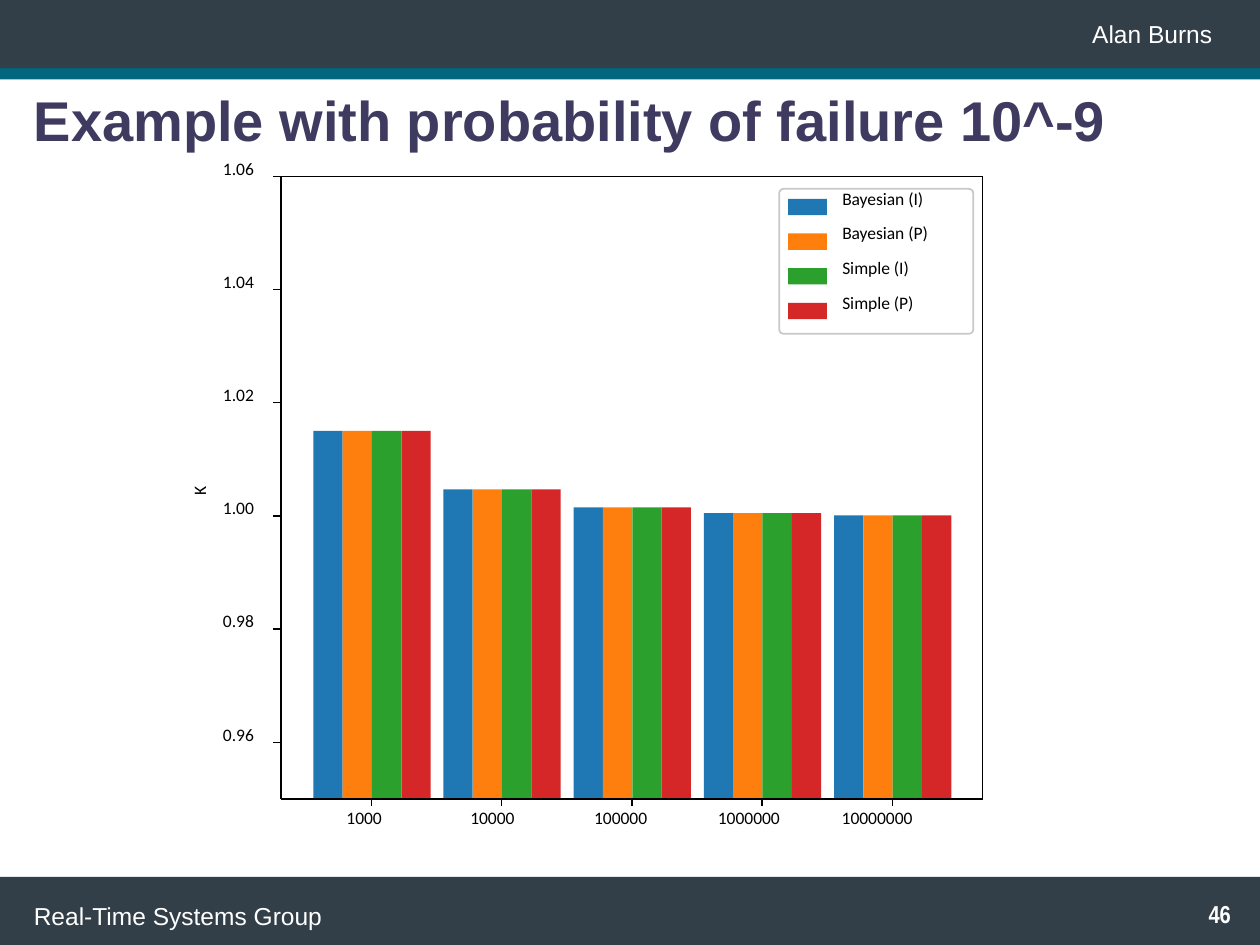
from lxml.etree import SubElement
from pptx import Presentation
from pptx.dml.color import RGBColor
from pptx.enum.shapes import MSO_CONNECTOR as Connector, MSO_SHAPE as Shape
from pptx.enum.text import MSO_ANCHOR as Anchor, PP_ALIGN as Align
from pptx.oxml.ns import qn
from pptx.util import Inches, Pt

WIDTH, HEIGHT = 10, 7.5
COLORS = {"band": "333F48", "stripe": "00677F", "title": "3F3A60", "white": "FFFFFF",
          "black": "000000", "legend_border": "C8C8C8",
          "blue": "1F77B4", "orange": "FF7F0E", "green": "2CA02C", "red": "D62728"}
SERIES = {"Bayesian (I)": "blue", "Bayesian (P)": "orange",
          "Simple (I)": "green", "Simple (P)": "red"}
K_PERCENT = {"1000": 101.5, "10000": 100.47, "100000": 100.15,
             "1000000": 100.05, "10000000": 100.01}
AXIS_MIN, AXIS_MAX = 95, 106
TICKS = range(96, AXIS_MAX + 1, 2)


def rgb(name):
    return RGBColor.from_string(COLORS[name])


def add_block(slide, box, color):
    block = slide.shapes.add_shape(Shape.RECTANGLE, *map(Inches, box))
    block.shadow.inherit = False
    block.fill.solid()
    block.fill.fore_color.rgb = rgb(color)
    block.line.fill.background()


def add_line(slide, start, end):
    line = slide.shapes.add_connector(Connector.STRAIGHT, *map(Inches, (*start, *end)))
    line.line.color.rgb = rgb("black")
    line.line.width = Pt(0.8)
    SubElement(line._element.spPr, qn("a:effectLst"))


def add_text(slide, box, text, size, color, align=Align.LEFT, name="Arial",
             bold=False, spacing=1.0):
    shape = slide.shapes.add_textbox(*map(Inches, box))
    frame = shape.text_frame
    frame.word_wrap = True
    frame.vertical_anchor = Anchor.MIDDLE
    paragraph = frame.paragraphs[0]
    paragraph.text = text
    paragraph.alignment = align
    paragraph.line_spacing = spacing
    font = paragraph.font
    font.name, font.size, font.bold = name, Pt(size), bold
    font.color.rgb = rgb(color)
    return shape


def add_label(slide, box, text):
    """Small chart label that starts at the top left corner of its box."""
    shape = add_text(slide, box, text, 10, "black", name="Calibri", spacing=1.07)
    frame = shape.text_frame
    frame.vertical_anchor = Anchor.TOP
    frame.margin_left = frame.margin_top = frame.margin_right = frame.margin_bottom = 0
    frame.paragraphs[0].space_after = Pt(8)
    return shape


def add_header(slide, box):
    left, top, width, height = box
    band_height = 0.86 * height
    add_block(slide, (left, top + band_height, width, height - band_height), "stripe")
    add_block(slide, (left, top, width, band_height), "band")
    add_text(slide, (left + 0.28 * width, top, 0.69 * width + 0.02, band_height),
             "Alan Burns", 14, "white", Align.RIGHT)


def add_footer(slide, box):
    left, top, width, height = box
    add_block(slide, box, "band")
    text_top = top + 0.07 * height
    add_text(slide, (left + 0.017 * width, text_top, 0.7 * width, height),
             "Real-Time Systems Group", 14, "white")
    add_text(slide, (left + 0.939 * width, text_top, 0.058 * width, height),
             "46", 14, "white", Align.CENTER, "Arial Narrow", True, 0.9)


def add_bars(slide, box):
    left, top, width, height = box
    bar_width, pitch = 0.0418 * width, 0.1855 * width
    first = left + 0.046 * width
    for row, color in enumerate(SERIES.values()):
        for column, value in enumerate(K_PERCENT.values()):
            bar_height = height * (value - AXIS_MIN) / (AXIS_MAX - AXIS_MIN)
            add_block(slide, (first + column * pitch + row * bar_width,
                              top + height - bar_height, bar_width, bar_height), color)


def add_axes(slide, box):
    left, top, width, height = box
    right, bottom = left + width, top + height
    tick = 0.06
    first, pitch, label_pitch = left + 0.129 * width, 0.1855 * width, 0.1764 * width
    for column, category in enumerate(K_PERCENT):
        x = first + column * pitch
        add_line(slide, (x, bottom), (x, bottom + tick))
        add_label(slide, (left + 0.52 + column * label_pitch, bottom + 0.05,
                          0.53 + 0.13 * column, 0.42), category)
    for value in TICKS:
        y = bottom - height * (value - AXIS_MIN) / (AXIS_MAX - AXIS_MIN)
        add_line(slide, (left - tick, y), (left, y))
        add_label(slide, (left - 0.46, y - 0.16, 0.46, 0.42), f"{value / 100:.2f}")
    add_label(slide, (left - 0.65, top + 2.28, 0.16, 0.35), "K").rotation = 270
    corners = [(left, top), (right, top), (right, bottom), (left, bottom)]
    for start, end in zip(corners, corners[1:] + corners[:1]):
        add_line(slide, start, end)


def add_legend(slide, box):
    left, top, width, height = box
    frame = slide.shapes.add_shape(Shape.ROUNDED_RECTANGLE, *map(Inches, box))
    frame.shadow.inherit = False
    frame.adjustments[0] = 0.03
    frame.fill.background()
    frame.line.color.rgb = rgb("legend_border")
    frame.line.width = Pt(1)
    row_height = 0.239 * height
    for row, (name, color) in enumerate(SERIES.items()):
        y = top + row * row_height
        add_block(slide, (left + 0.07, y + 0.08, 0.2 * width, 0.13), color)
        add_label(slide, (left + 0.5, y - 0.02, 0.85 * width, 0.42), name)


def add_failure_chart(slide, box):
    left, top, width, height = box
    add_bars(slide, box)
    add_axes(slide, box)
    add_legend(slide, (left + 0.71 * width, top + 0.02 * height, 1.54, 1.15))


def main():
    presentation = Presentation()
    presentation.slide_width, presentation.slide_height = Inches(WIDTH), Inches(HEIGHT)
    slide = presentation.slides.add_slide(presentation.slide_layouts[6])
    add_footer(slide, (0, 6.96, WIDTH, 0.54))
    add_header(slide, (0, 0, WIDTH, 0.63))
    add_text(slide, (0.17, 0.7, 9.66, 0.55), "Example with probability of failure 10^-9",
             32, "title", bold=True, spacing=0.9)
    add_failure_chart(slide, (2.23, 1.4, 5.57, 4.94))
    presentation.save("out.pptx")


if __name__ == "__main__":
    main()
